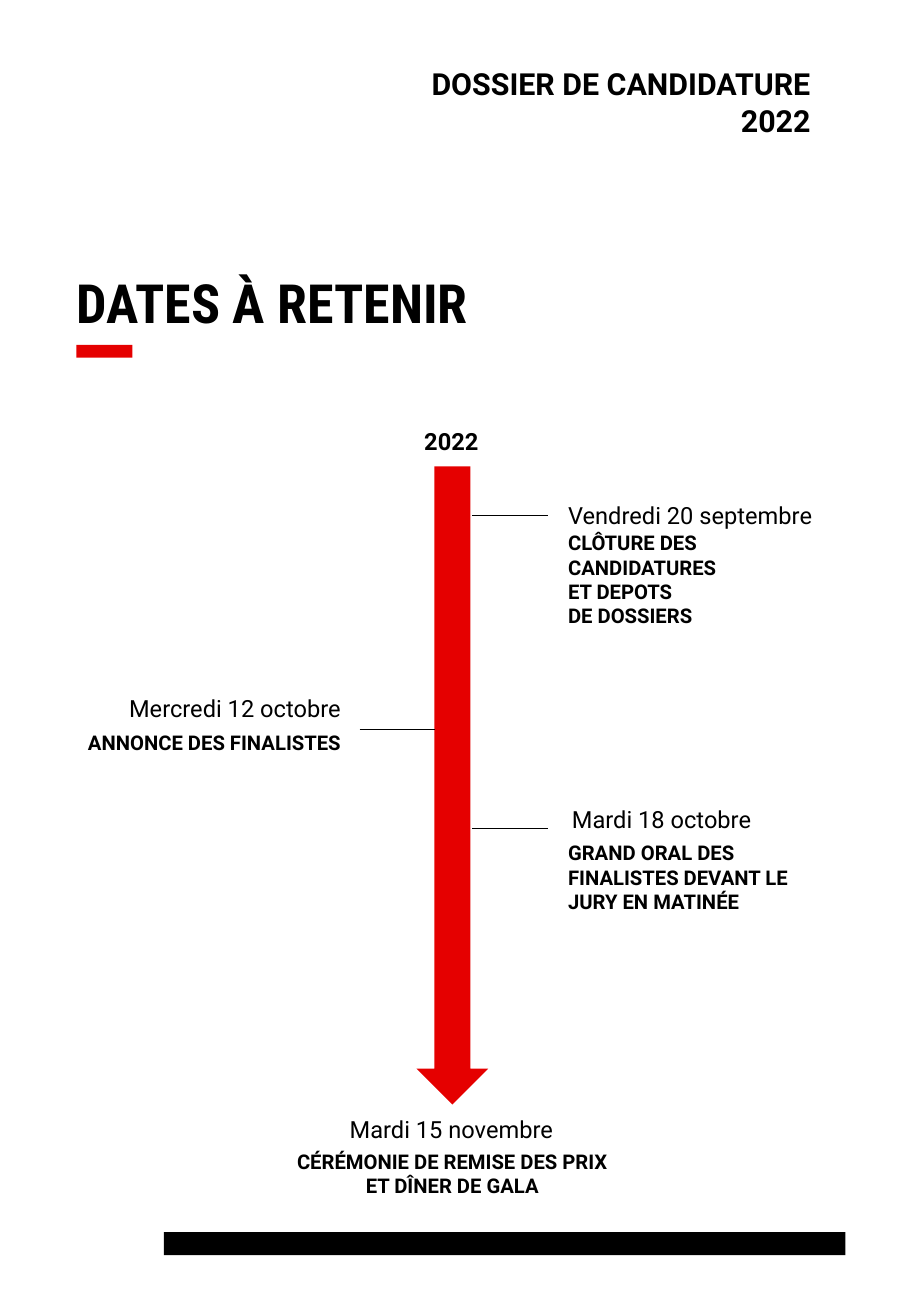
from lxml import etree
from pptx import Presentation
from pptx.dml.color import RGBColor
from pptx.enum.shapes import MSO_CONNECTOR, MSO_SHAPE
from pptx.enum.text import PP_ALIGN
from pptx.oxml.ns import qn
from pptx.util import Cm, Pt

LEFT, MID, RIGHT = PP_ALIGN.LEFT, PP_ALIGN.CENTER, PP_ALIGN.RIGHT
RECT, ARROW = MSO_SHAPE.RECTANGLE, MSO_SHAPE.DOWN_ARROW
STRAIGHT = MSO_CONNECTOR.STRAIGHT
COLORS = {"ink": "000000", "red": "E50000"}

# side, date, date top, date indent, event, event top, event width and height, line top
EVENTS = [
    (LEFT, "Vendredi 20 septembre", 1.55, 0,
     "CLÔTURE DES CANDIDATURES\nET DEPOTS\vDE DOSSIERS", 2.18, 5.61, 2.31, 1.98),
    (RIGHT, "Mercredi 12 octobre", 5.59, 0,
     "ANNONCE DES FINALISTES", 6.35, 6.73, 0.86, 6.45),
    (LEFT, "Mardi 18 octobre", 7.92, 0.08,
     "GRAND ORAL DES FINALISTES DEVANT LE JURY EN MATINÉE", 8.66, 5.72, 1.8, 8.53),
]


def color(name):
    return RGBColor.from_string(COLORS[name])


def add_text(slide, box, text, size, bold=False, align=LEFT, font="Roboto"):
    frame = slide.shapes.add_textbox(*map(Cm, box)).text_frame
    frame.word_wrap = True
    frame.text = text
    for para in frame.paragraphs:
        para.alignment = align
        for run in para.runs:
            run.font.name = font
            run.font.size = Pt(size)
            run.font.bold = bold
            run.font.color.rgb = color("ink")


def add_block(slide, kind, box, fill):
    shape = slide.shapes.add_shape(kind, *map(Cm, box))
    shape.shadow.inherit = False
    shape.fill.solid()
    shape.fill.fore_color.rgb = color(fill)
    shape.line.fill.background()


def add_rule(slide, left, right, top):
    line = slide.shapes.add_connector(STRAIGHT, Cm(left), Cm(top), Cm(right), Cm(top))
    line.line.color.rgb = color("ink")
    line.line.width = Pt(0.5)
    etree.SubElement(line._element.spPr, qn("a:effectLst"))


def add_title(slide, box):
    x, y, w, h = box
    add_block(slide, RECT, (x + 0.25, y + 1.7, 1.17, 0.27), "red")
    add_text(slide, (x, y, w, h), "DATES À RETENIR", 32, True, font="Roboto Condensed")


def add_event(slide, axis, y, event):
    """Place one dated event beside the axis, with its rule."""
    side, date, date_y, indent, name, name_y, width, height, rule_y = event
    if side == LEFT:
        edge, rule = axis + 2.17, (axis + 0.42, axis + 2)
        date_x, name_x = edge + indent, edge
    else:
        edge, rule = axis - 2.08, (axis - 1.94, axis - 0.37)
        date_x, name_x = edge - 7, edge - width
    add_rule(slide, *rule, y + rule_y)
    add_text(slide, (date_x, y + date_y, 7, 0.86), date, 14, align=side)
    add_text(slide, (name_x, y + name_y, width, height), name, 12, True, side)


def add_timeline(slide, box):
    x, y, w, h = box
    axis = x + w / 2
    add_text(slide, (axis - 1.43, y, 2.82, 0.86), "2022", 14, True, MID)
    add_block(slide, ARROW, (axis - 0.75, y + 0.96, 1.5, 13.34), "red")
    for event in EVENTS:
        add_event(slide, axis, y, event)
    add_text(slide, (axis - 3.03, y + h - 1.98, 6.02, 0.86), "Mardi 15 novembre", 14, align=MID)
    add_text(slide, (axis - 4.05, y + h - 1.27, 8.1, 1.27),
             "CÉRÉMONIE DE REMISE DES PRIX\vET DÎNER DE GALA", 12, True, MID)


def main():
    deck = Presentation()
    deck.slide_width, deck.slide_height = Cm(19.05), Cm(27.51)
    slide = deck.slides.add_slide(deck.slide_layouts[6])
    add_block(slide, RECT, (3.43, 25.76, 14.25, 0.48), "ink")
    add_text(slide, (7.32, 1.24, 9.88, 1.78), "DOSSIER DE CANDIDATURE 2022", 18, True, RIGHT)
    add_title(slide, (1.35, 5.51, 16.43, 1.63))
    add_timeline(slide, (0.64, 8.79, 17.64, 16.38))
    deck.save("out.pptx")


if __name__ == "__main__":
    main()
